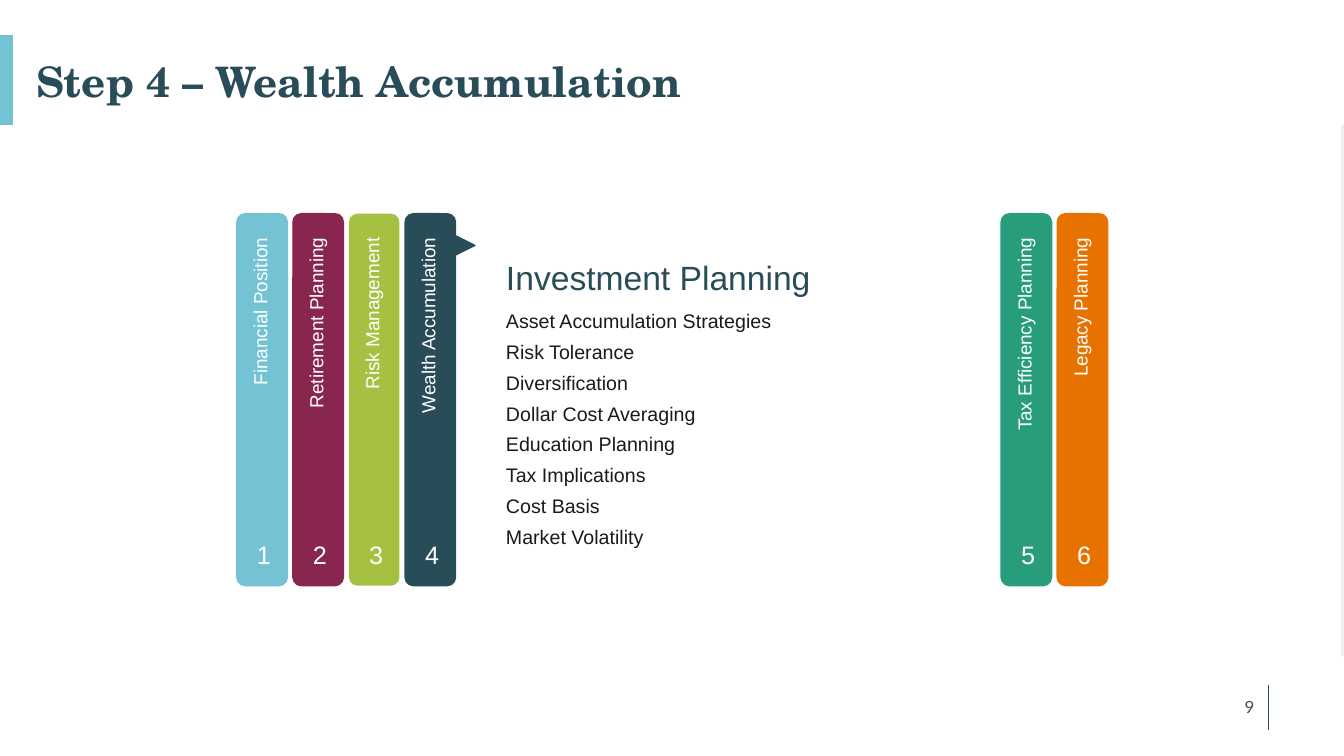
import pptx
import pptx.util
import pptx.dml.color
import pptx.enum.shapes
import pptx.enum.text
import pptx.oxml

Inches = pptx.util.Inches
Pt = pptx.util.Pt
Shape = pptx.enum.shapes.MSO_SHAPE
Align = pptx.enum.text.PP_ALIGN
Anchor = pptx.enum.text.MSO_ANCHOR
Fit = pptx.enum.text.MSO_AUTO_SIZE

# Content
TITLE = "Step 4 – Wealth Accumulation"
HEAD = "Investment Planning"
TOPICS = [
    "Asset Accumulation Strategies",
    "Risk Tolerance",
    "Diversification",
    "Dollar Cost Averaging",
    "Education Planning",
    "Tax Implications",
    "Cost Basis",
    "Market Volatility",
]
# label, colour, label length, edge width in points
STEPS = [
    ("Financial Position", "73C3D4", 1.93, 1),
    ("Retirement Planning", "89264F", 2.2, 1),
    ("Risk Management", "A6C041", 2.04, 0),
    ("Wealth Accumulation", "294C59", 2.2, 1),
    ("Tax Efficiency Planning", "279D7B", 2.49, 1),
    ("Legacy Planning", "E87200", 1.86, 1),
]
PAGE = "9"
DARK, WHITE = "294C59", "FFFFFF"

# Layout
OPEN = 4                    # the step whose panel is open
LEFT, RIGHT = 2.35, 9.93    # first bar of each stack
PITCH, WIDE = 0.556, 0.5
TOP, TALL = 2.12, 3.69

deck = pptx.Presentation()
deck.slide_width, deck.slide_height = Inches(13.33), Inches(7.5)
slide = deck.slides.add_slide(deck.slide_layouts[6])


def tint(code):
    return pptx.dml.color.RGBColor.from_string(code)


def block(kind, x, y, w, h, fill, edge=0):
    shape = slide.shapes.add_shape(
        kind, Inches(x), Inches(y), Inches(w), Inches(h))
    shape.shadow.inherit = False
    shape.fill.solid()
    shape.fill.fore_color.rgb = tint(fill)
    if edge:
        shape.line.color.rgb = tint(fill)
        shape.line.width = Pt(edge)
    else:
        shape.line.fill.background()
    return shape


def box(x, y, w, h):
    return slide.shapes.add_textbox(
        Inches(x), Inches(y), Inches(w), Inches(h))


def write(shape, *lines, size, color=WHITE, font="Arial", bold=False,
          align=Align.LEFT, anchor=Anchor.TOP, wrap=True, grow=False,
          lead=None, gap=0):
    frame = shape.text_frame
    frame.word_wrap = wrap
    frame.vertical_anchor = anchor
    if grow:
        frame.auto_size = Fit.SHAPE_TO_FIT_TEXT
    for i, line in enumerate(lines):
        para = frame.add_paragraph() if i else frame.paragraphs[0]
        para.alignment = align
        if lead:
            para.line_spacing = lead
        if i and gap:
            para.space_before = Pt(gap)
        run = para.add_run()
        run.text = line
        run.font.name, run.font.size, run.font.bold = font, Pt(size), bold
        run.font.color.rgb = tint(color)


def rule(x, y1, y2, color, width):
    line = slide.shapes.add_connector(
        pptx.enum.shapes.MSO_CONNECTOR.STRAIGHT,
        Inches(x), Inches(y1), Inches(x), Inches(y2))
    line.line.color.rgb = tint(color)
    line.line.width = Pt(width)
    line._element.spPr.append(pptx.oxml.parse_xml(
        '<a:effectLst xmlns:a='
        '"http://schemas.openxmlformats.org/drawingml/2006/main"/>'))


# Frame and title
block(Shape.RECTANGLE, 13.3, 1.24, 0.03, 5.27, "F0F0F0")
rule(0.06, 1.24, 0.35, "74C3D5", 10)
rule(12.58, 6.8, 7.24, DARK, 0.75)
write(box(0.26, 0.35, 12.77, 0.76), TITLE, size=30, color=DARK,
      font="TeX Gyre Schola", bold=True, anchor=Anchor.BOTTOM, lead=0.9)

# Open panel
write(box(4.92, 2.99, 4.56, 2.58), *TOPICS, size=14, color="1A1A1A",
      lead=1.1, gap=3.6)
write(box(4.92, 2.5, 3.31, 0.51), HEAD, size=24, color=DARK, grow=True)
arrow = block(Shape.RIGHT_ARROW, 4.27, 2.32, 0.44, 0.23, DARK, 1)
arrow.adjustments[1] = 1

# Step bars with number and upright label
for i, (label, color, span, edge) in enumerate(STEPS):
    x = LEFT + i * PITCH if i < OPEN else RIGHT + (i - OPEN) * PITCH
    block(Shape.ROUNDED_RECTANGLE, x, TOP, WIDE, TALL, color, edge)
    num = block(Shape.RECTANGLE, x + 0.1, 5.3, 0.34, 0.4, color, edge * 0.75)
    write(num, str(i + 1), size=18, wrap=False, grow=True)
    mid = x + 0.23
    tag = box(mid - span / 2, 2.26 + span / 2 - 0.165, span, 0.33)
    tag.rotation = 270
    write(tag, label, size=13.5, align=Align.RIGHT, grow=True)

# Page number
write(box(9.54, 6.81, 3, 0.4), PAGE, size=12, color="4B4C4D", font="Lato",
      align=Align.RIGHT, anchor=Anchor.MIDDLE)

deck.save("out.pptx")
